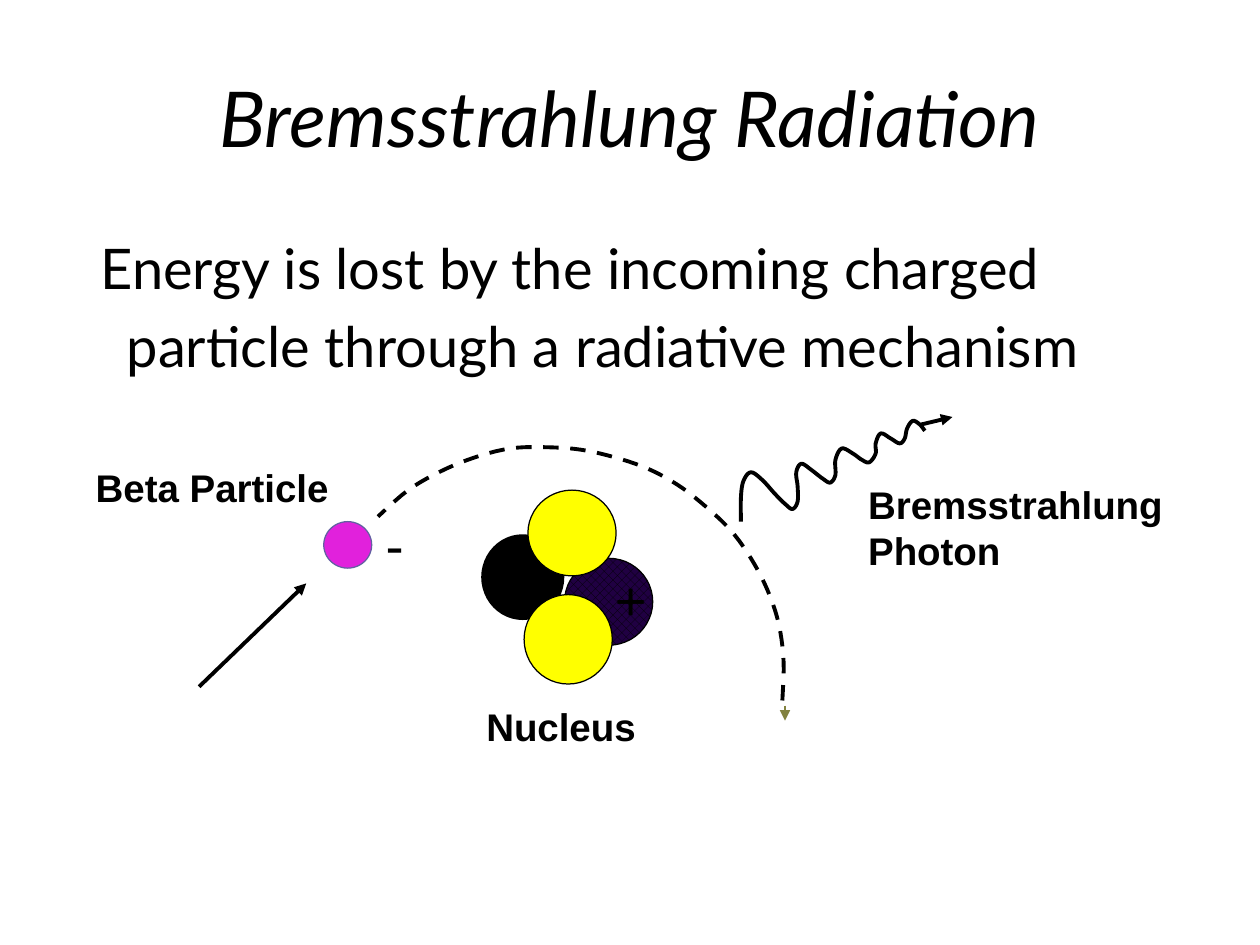
from dataclasses import dataclass
from typing import NamedTuple, Optional

from lxml import etree
from pptx import Presentation
from pptx.dml.color import RGBColor
from pptx.enum import dml, shapes, text
from pptx.oxml import ns
from pptx.util import Pt


@dataclass(frozen=True)
class Theme:
    ink: str = "000000"
    beta: str = "E121DC"
    beta_edge: str = "6260A1"
    proton: str = "200042"
    neutron: str = "FFFF00"
    path_tip: str = "82823F"
    heading_font: str = "Lato"
    label_font: str = "Arial"
    title: float = 44
    body: float = 32
    sign: float = 31
    label: float = 22
    thin: float = 0.72
    thick: float = 2.22


THEME = Theme()


class Point(NamedTuple):
    x: float
    y: float


class Frame(NamedTuple):
    left: float
    top: float
    width: float
    height: float


@dataclass(frozen=True)
class Label:
    wording: str
    frame: Frame
    size: float = THEME.label
    bold: bool = True


@dataclass(frozen=True)
class Ball:
    frame: Frame
    fill: str
    edge: Optional[str] = THEME.ink
    hatched: bool = False


@dataclass(frozen=True)
class Arrow:
    start: Point
    end: Point
    color: str = THEME.ink
    weight: float = THEME.thick


@dataclass(frozen=True)
class Curve:
    knots: list[Point]
    dashed: bool = False


TITLE = Frame(54, 21.6, 612, 90)
BODY = Frame(50.4, 129.6, 612, 365.8)
BODY_LINES = ["Energy is lost by the incoming charged",
              "particle through a radiative mechanism"]
HANGING = 15

BALLS = [
    Ball(Frame(185, 298.1, 27.4, 26.6), THEME.beta, THEME.beta_edge),
    Ball(Frame(275, 305.3, 47.5, 49), THEME.ink, None),
    Ball(Frame(322.6, 319, 50.4, 49.7), THEME.proton, hatched=True),
    Ball(Frame(299.5, 339.8, 50.4, 51.1), THEME.neutron),
    Ball(Frame(301.7, 280.1, 50.4, 49), THEME.neutron),
]
LABELS = [
    Label("Beta Particle", Frame(54.7, 265, 135.4, 25.9)),
    Label("-", Frame(220.3, 292.3, 10.8, 36.7), THEME.sign, False),
    Label("Bremsstrahlung Photon", Frame(496.1, 275, 174.2, 53.3)),
    Label("+", Frame(351.4, 323.3, 21.6, 36.7), THEME.sign, False),
    Label("Nucleus", Frame(277.9, 401.8, 97.9, 21.6)),
]
ARROWS = [
    Arrow(Point(113.8, 392.4), Point(175, 333.4)),
    Arrow(Point(448.6, 403.2), Point(448.6, 411.8), THEME.path_tip, THEME.thin),
    Arrow(Point(526.3, 242.6), Point(544.3, 238.3)),
]
BETA_PATH = Curve([Point(*pair) for pair in (
    (447.1, 400.3), (447.8, 378), (445, 356.4), (438.5, 337), (429.1, 319),
    (417.6, 303.1), (403.2, 289.4), (387.4, 277.2), (370.1, 267.8),
    (351.4, 261.4), (331.9, 257), (311.8, 255.6), (291.6, 256.3),
    (271.4, 261.4), (252, 269.3), (233.3, 280.1), (216, 295.2))], dashed=True)
PHOTON_WAVE = Curve([Point(*pair) for pair in (
    (423.4, 298.1), (423.4, 284.4), (424.8, 275), (429.1, 269.9),
    (435.6, 274.3), (442.8, 282.2), (448.6, 288), (452.9, 290.9),
    (455.8, 286.6), (455.8, 277.9), (455, 270), (457.9, 265),
    (463.7, 268.6), (470.2, 273.6), (474.5, 275.8), (477.4, 271.4),
    (477.4, 262.8), (481, 256.3), (487.4, 259.2), (492.5, 262.8),
    (496.8, 264.2), (500.4, 259.2), (500.4, 253.4), (503.3, 247.7),
    (509, 250.6), (514.1, 253.4), (517, 250.6), (518.4, 244.8),
    (521.6, 240.5), (525.6, 242.6), (528.5, 246.2))])


def rgb(color: str) -> RGBColor:
    return RGBColor.from_string(color)


def in_points(values) -> list[Pt]:
    return [Pt(value) for value in values]


def style_line(line, color: str, weight: float) -> None:
    line.color.rgb = rgb(color)
    line.width = Pt(weight)


def add_text(page, frame: Frame, lines: list[str], formats: dict,
             inset: Optional[float] = None):
    box = page.shapes.add_textbox(*in_points(frame))
    body = box.text_frame
    body.word_wrap = True
    if inset is not None:
        for side in ("left", "right", "top", "bottom"):
            setattr(body, f"margin_{side}", Pt(inset))
    body.text = "\n".join(lines)
    for para in body.paragraphs:
        for span in para.runs:
            span.font.color.rgb = rgb(THEME.ink)
            for name, value in formats.items():
                setattr(span.font, name, value)
    return body


def add_label(page, label: Label) -> None:
    formats = {"name": THEME.label_font, "size": Pt(label.size), "bold": label.bold}
    add_text(page, label.frame, [label.wording], formats, inset=0)


def add_ball(page, ball: Ball) -> None:
    shape = page.shapes.add_shape(shapes.MSO_SHAPE.OVAL, *in_points(ball.frame))
    shape.shadow.inherit = False
    if ball.hatched:
        shape.fill.patterned()
        shape.fill.pattern = dml.MSO_PATTERN.PERCENT_50
        shape.fill.fore_color.rgb = rgb(THEME.ink)
        shape.fill.back_color.rgb = rgb(ball.fill)
    else:
        shape.fill.solid()
        shape.fill.fore_color.rgb = rgb(ball.fill)
    if ball.edge:
        style_line(shape.line, ball.edge, THEME.thin)
    else:
        shape.line.fill.background()


def add_arrow(page, arrow: Arrow) -> None:
    connector = page.shapes.add_connector(
        shapes.MSO_CONNECTOR.STRAIGHT, *in_points(arrow.start + arrow.end))
    style_line(connector.line, arrow.color, arrow.weight)
    properties = connector.line._get_or_add_ln()
    etree.SubElement(properties, ns.qn("a:tailEnd"), type="triangle")
    etree.SubElement(properties.getparent(), ns.qn("a:effectLst"))


def smooth(knots: list[Point], steps: int = 5) -> list[Point]:
    """Run a Catmull-Rom curve through the knots."""
    padded = [knots[0], *knots, knots[-1]]
    points = [knots[0]]
    for four in zip(padded, padded[1:], padded[2:], padded[3:]):
        for step in range(1, steps + 1):
            t = step / steps
            points.append(Point(*(
                b + t * (c - a) / 2 + t**2 * (2 * a - 5 * b + 4 * c - d) / 2
                + t**3 * (3 * b - a - 3 * c + d) / 2
                for a, b, c, d in zip(*four))))
    return points


def add_curve(page, curve: Curve) -> None:
    start, *rest = [in_points(point) for point in smooth(curve.knots)]
    builder = page.shapes.build_freeform(*start)
    builder.add_line_segments(rest, close=False)
    shape = builder.convert_to_shape()
    shape.shadow.inherit = False
    shape.fill.background()
    style_line(shape.line, THEME.ink, THEME.thick)
    if curve.dashed:
        shape.line.dash_style = dml.MSO_LINE.DASH


def add_headings(page) -> None:
    heading = {"name": THEME.heading_font}
    title = add_text(page, TITLE, ["Bremsstrahlung Radiation"],
                     heading | {"size": Pt(THEME.title), "italic": True})
    title.vertical_anchor = text.MSO_ANCHOR.MIDDLE
    title.paragraphs[0].alignment = text.PP_ALIGN.CENTER
    body = add_text(page, BODY, BODY_LINES, heading | {"size": Pt(THEME.body)})
    second = body.paragraphs[1]
    second.space_before = Pt(THEME.body * 0.2)
    second._p.get_or_add_pPr().set("marL", str(Pt(HANGING)))


def main() -> None:
    deck = Presentation()
    deck.slide_width, deck.slide_height = Pt(720), Pt(540)
    page = deck.slides.add_slide(deck.slide_layouts[6])
    add_headings(page)
    for draw, items in ((add_curve, [BETA_PATH, PHOTON_WAVE]), (add_arrow, ARROWS),
                        (add_ball, BALLS), (add_label, LABELS)):
        for item in items:
            draw(page, item)
    deck.save("out.pptx")


if __name__ == "__main__":
    main()
